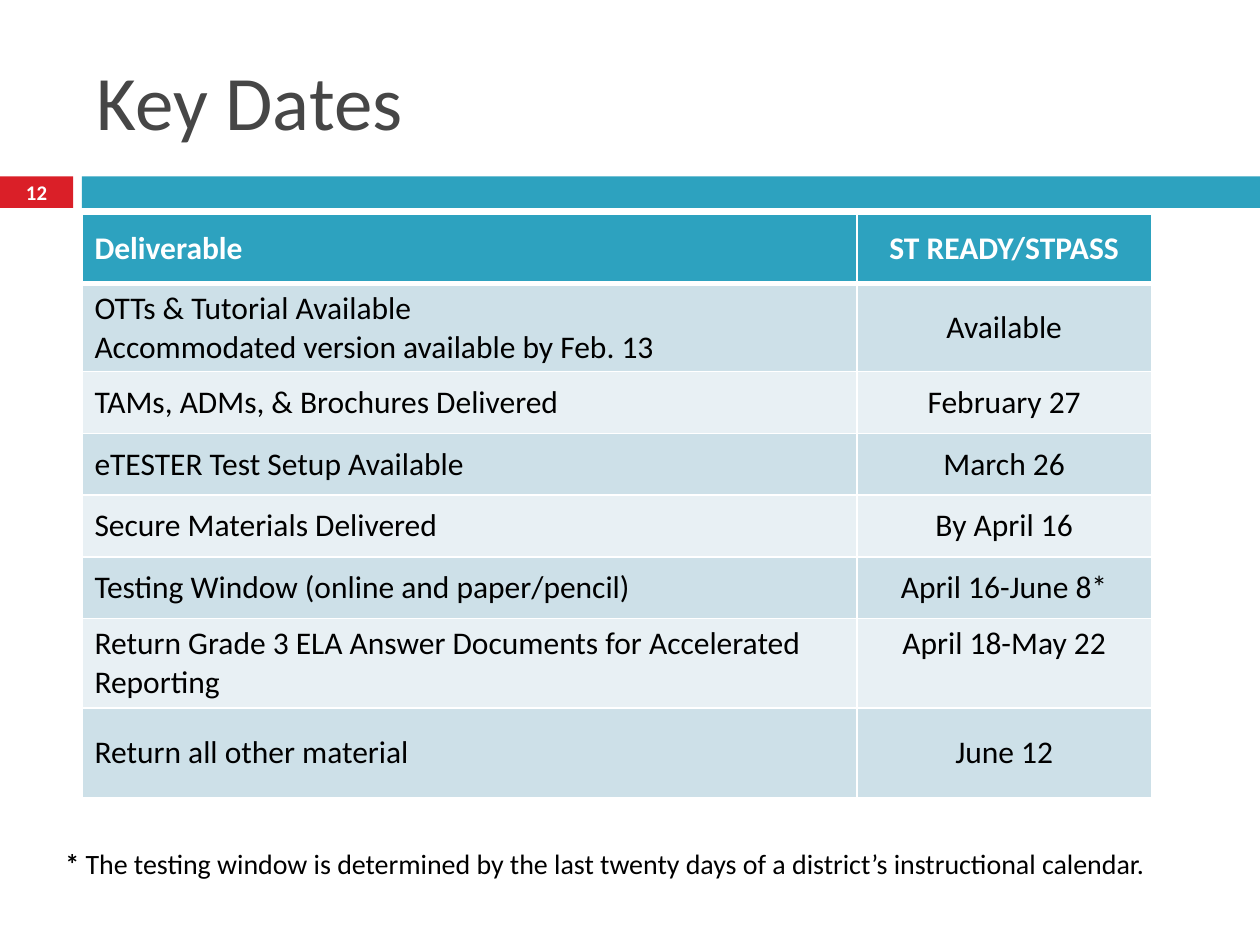
"""Build the Key Dates slide with its schedule table and footnote."""
from lxml import etree
from pptx import Presentation
from pptx.dml.color import RGBColor
from pptx.enum.shapes import MSO_SHAPE as SHAPE
from pptx.enum.text import MSO_ANCHOR as ANCHOR, PP_ALIGN as ALIGN
from pptx.oxml.ns import qn
from pptx.util import Inches, Pt


def rgb(color):
    return RGBColor.from_string(color)


def write(tf, runs, size, color, align=ALIGN.LEFT, anchor=ANCHOR.MIDDLE):
    tf.word_wrap = True
    tf.vertical_anchor = anchor
    p = tf.paragraphs[0]
    p.alignment = align
    for text, bold in runs:
        for i, line in enumerate(text.split("\n")):
            if i:
                p.add_line_break()
            r = p.add_run()
            r.text = line
            r.font.color.rgb = rgb(color)
            for key, value in {"name": "Calibri", "size": Pt(size), "bold": bold}.items():
                setattr(r.font, key, value)


prs = Presentation()
prs.slide_width, prs.slide_height = Inches(10), Inches(7.5)
s = prs.slides.add_slide(prs.slide_layouts[6])

for left, width, color in [(0, 0.58, "DA1F28"), (0.65, 9.35, "2DA2BF")]:
    sp = s.shapes.add_shape(SHAPE.RECTANGLE, Inches(left), Inches(1.4), Inches(width), Inches(0.25))
    sp.shadow.inherit = False
    sp.fill.solid()
    sp.fill.fore_color.rgb = rgb(color)
    sp.line.fill.background()

note = "The testing window is determined by the last twenty days of a district’s instructional calendar."
texts = [
    ((0.67, 0.25, 8.92, 1.08), [("Key Dates", False)], 44, "464646", ALIGN.LEFT, ANCHOR.MIDDLE),
    ((0, 1.39, 0.58, 0.27), [("12", True)], 11.9, "FFFFFF", ALIGN.CENTER, ANCHOR.MIDDLE),
    ((0.42, 6.67, 8.92, 0.37), [("* ", True), (note, False)], 16, "000000", ALIGN.LEFT, ANCHOR.TOP),
]
for box, *style in texts:
    sp = s.shapes.add_textbox(*map(Inches, box))
    write(sp.text_frame, *style)

rows = [
    ("Deliverable", "ST READY/STPASS", 0.55),
    ("OTTs & Tutorial Available\nAccommodated version available by Feb. 13", "Available", 0.7),
    ("TAMs, ADMs, & Brochures Delivered", "February 27", 0.49),
    ("eTESTER Test Setup Available", "March 26", 0.49),
    ("Secure Materials Delivered", "By April 16", 0.49),
    ("Testing Window (online and paper/pencil)", "April 16-June 8*", 0.49),
    ("Return Grade 3 ELA Answer Documents for Accelerated Reporting", "April 18-May 22", 0.71),
    ("Return all other material", "June 12", 0.71),
]
height = sum(row[2] for row in rows)
table = s.shapes.add_table(len(rows), 2, Inches(0.65), Inches(1.7), Inches(8.49), Inches(height)).table
for col, width in zip(table.columns, (6.15, 2.34)):
    col.width = Inches(width)

for i, (*labels, height) in enumerate(rows):
    table.rows[i].height = Inches(height)
    header = i == 0
    fill = "2DA2BF" if header else ("E8F0F4", "CDE0E8")[i % 2]
    for j, label in enumerate(labels):
        cell = table.cell(i, j)
        align = ALIGN.CENTER if j else ALIGN.LEFT
        anchor = ANCHOR.TOP if label == "April 18-May 22" else ANCHOR.MIDDLE
        write(cell.text_frame, [(label, header)], 18, "FFFFFF" if header else "000000", align)
        cell.vertical_anchor = anchor
        pr = cell._tc.get_or_add_tcPr()
        for side in ("lnL", "lnR", "lnT", "lnB"):
            thick = (header and side == "lnB") or (i == 1 and side == "lnT")
            ln = etree.SubElement(pr, qn(f"a:{side}"), w=str(Pt(3 if thick else 1)))
            line_fill = etree.SubElement(ln, qn("a:solidFill"))
            etree.SubElement(line_fill, qn("a:srgbClr"), val="FFFFFF")
        cell.fill.solid()
        cell.fill.fore_color.rgb = rgb(fill)

prs.save("out.pptx")
